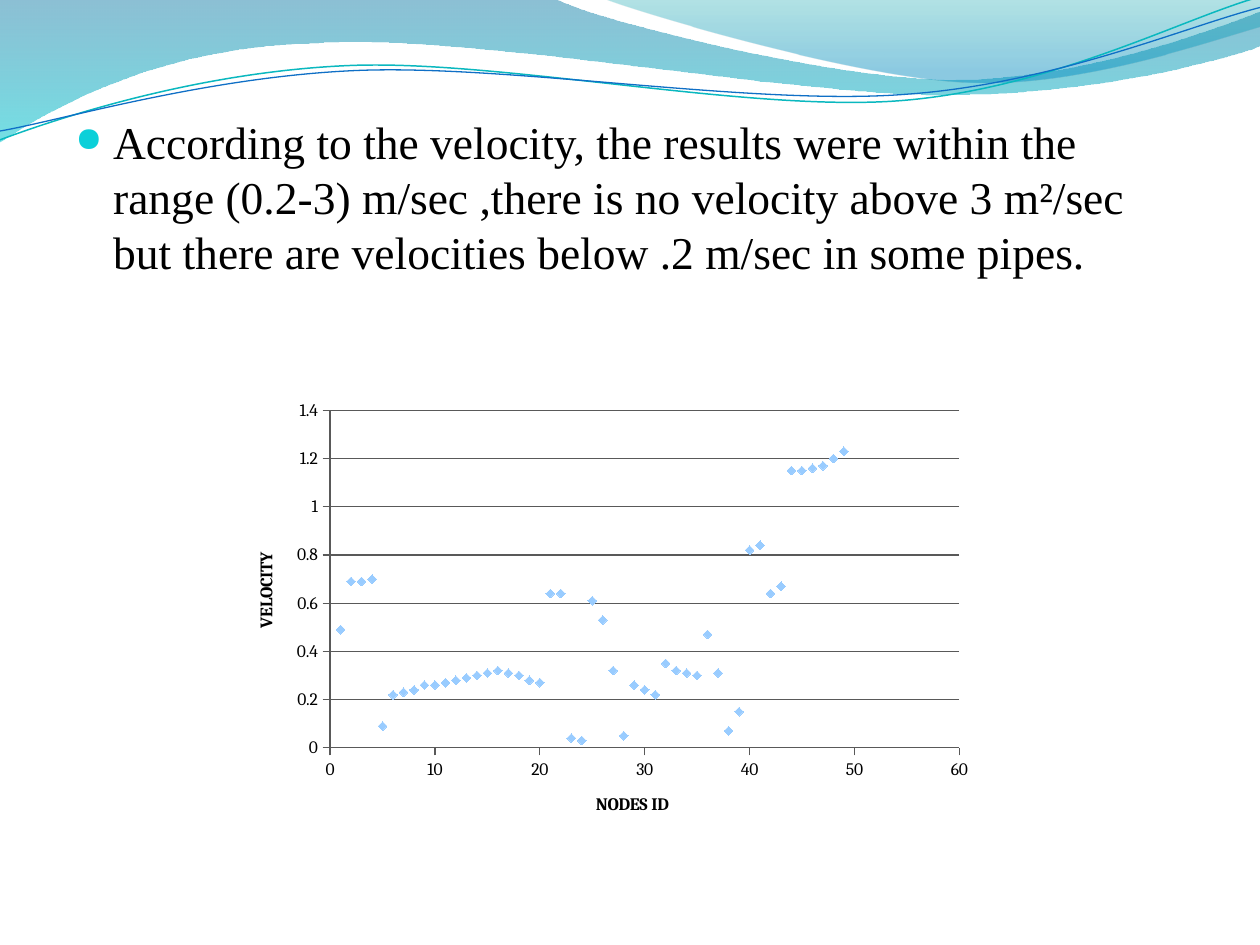
"""Build the pipe velocity results slide with its wave header and scatter chart."""
from math import cos, radians, sin
from lxml import etree
from pptx import Presentation
from pptx.chart.data import XyChartData
from pptx.dml.color import RGBColor
from pptx.enum.chart import XL_CHART_TYPE as ChartType, XL_MARKER_STYLE as Marker
from pptx.enum.chart import XL_TICK_MARK as TickMark
from pptx.oxml import parse_xml
from pptx.oxml.ns import nsdecls, qn
from pptx.util import Inches, Pt

BLACK = RGBColor(0x00, 0x00, 0x00)
GRAY = RGBColor(0x59, 0x59, 0x59)
SKY = RGBColor(0x99, 0xCC, 0xFF)
TEAL = RGBColor(0x0A, 0xB8, 0xBF)
BLUE = RGBColor(0x0F, 0x6F, 0xC6)
OCEAN = RGBColor(0x00, 0x74, 0xA1)
AQUA = RGBColor(0x00, 0xC6, 0xCF)
SEA = RGBColor(0x00, 0xA1, 0xA9)
AZURE = RGBColor(0x00, 0x8B, 0xBF)
TILT = 2.7


def level(point, center):
    """Turn a point clockwise about a center by the tilt of the strands."""
    x, y = point[0] - center[0], point[1] - center[1]
    c, s = cos(radians(TILT)), sin(radians(TILT))
    return center[0] + x * c - y * s, center[1] + x * s + y * c


def add_wave(segments, close, center=None):
    """Draw an outline of line ends and cubic curves and return its shape."""
    points = [point for segment in segments for point in zip(segment[::2], segment[1::2])]
    if center:
        points = [level(point, center) for point in points]
    points = [(Inches(x), Inches(y)) for x, y in points]
    builder = page.shapes.build_freeform(*points[0], scale=1)
    builder.add_line_segments(points[1:], close=close)
    wave = builder.convert_to_shape()
    wave.shadow.inherit = False
    legs = list(wave.element.iter(qn("a:lnTo")))
    for segment in segments[1:]:
        leg = legs.pop(0)
        if len(segment) == 6:
            leg.tag = qn("a:cubicBezTo")
            for control in (legs.pop(0), legs.pop(0)):
                leg.append(control[0])
                control.getparent().remove(control)
    return wave


deck = Presentation()
deck.slide_width, deck.slide_height = Inches(10), Inches(7.5)
page = deck.slides.add_slide(deck.slide_layouts[6])

bands = [
    ([(0, 0), (4.4, -0.01), (4.76, 0.17, 6.64, 0.63, 7.58, 0.63),
      (8.53, 0.63, 9.58, 0.26, 10, 0.09), (10.01, 0.36),
      (9.83, 0.44, 8.7, 0.76, 7.46, 0.75),
      (6.22, 0.75, 3.82, 0.28, 2.57, 0.34),
      (1.29, 0.36, 0.46, 0.83, -0.01, 1.13), (0, 0)],
     [(0, OCEAN, 45), (1, AQUA, 55)]),
    ([(4.79, -0.01), (5.09, 0.11, 6.82, 0.62, 7.69, 0.65),
      (8.56, 0.69, 9.61, 0.32, 10, 0.21), (10, 0), (4.79, -0.01)],
     [(0, SEA, 30), (0.8, AZURE, 45)]),
]
for segments, stops in bands:
    band = add_wave(segments, True)
    band.line.fill.background()
    band.fill.gradient()
    band.fill.gradient_angle = 270
    for stop, (position, color, opacity) in zip(band.fill.gradient_stops, stops):
        stop.position = position
        stop.color.rgb = color
    colors = band.element.spPr.iter(qn("a:srgbClr"))
    for node, (position, color, opacity) in zip(colors, stops):
        etree.SubElement(node, qn("a:alpha")).set("val", str(opacity * 1000))

strands = [
    ([(0, 1.11), (0.48, 0.93, 1.58, 0.57, 2.77, 0.52),
      (3.95, 0.47, 5.93, 0.89, 7.13, 0.8),
      (8.33, 0.71, 9.38, 0.15, 9.98, -0.02)], (4.99, 0.58), TEAL, 0.85),
    ([(0, 1.04), (0.47, 0.96, 1.64, 0.61, 2.83, 0.56),
      (4.03, 0.51, 5.97, 0.84, 7.17, 0.75),
      (8.36, 0.67, 9.41, 0.21, 10, 0.06)], (5, 0.59), BLUE, 0.75),
]
pair = []
for segments, center, color, width in strands:
    strand = add_wave(segments, False, center)
    strand.rotation = -TILT
    strand.fill.background()
    strand.line.color.rgb = color
    strand.line.width = Pt(width)
    pair.append(strand)
page.shapes.add_group_shape(pair)

box = page.shapes.add_textbox(Inches(0.5), Inches(0.86), Inches(9), Inches(6.06))
box.text_frame.word_wrap = True
para = box.text_frame.paragraphs[0]
span = para.add_run()
span.text = ("According to the velocity, the results were within the range (0.2-3) m/sec "
             ",there is no velocity above 3 m²/sec but there are velocities below "
             ".2 m/sec in some pipes.")
for name, value in {"name": "Times New Roman", "size": Pt(26)}.items():
    setattr(span.font, name, value)
span.font.color.rgb = BLACK
indent = para._p.get_or_add_pPr()
indent.set("marL", str(Inches(0.3)))
indent.set("indent", str(Inches(-0.3)))
for part in ('<a:spcBef {}><a:spcPct val="20000"/></a:spcBef>',
             '<a:buClr {}><a:srgbClr val="0BD0D9"/></a:buClr>',
             '<a:buSzPct {} val="75000"/>',
             '<a:buChar {} char="●"/>'):
    indent.append(parse_xml(part.format(nsdecls("a"))))

velocities = [
    0.49, 0.69, 0.69, 0.7, 0.09, 0.22, 0.23, 0.24, 0.26, 0.26, 0.27, 0.28, 0.29,
    0.3, 0.31, 0.32, 0.31, 0.3, 0.28, 0.27, 0.64, 0.64, 0.04, 0.03, 0.61, 0.53,
    0.32, 0.05, 0.26, 0.24, 0.22, 0.35, 0.32, 0.31, 0.3, 0.47, 0.31, 0.07, 0.15,
    0.82, 0.84, 0.64, 0.67, 1.15, 1.15, 1.16, 1.17, 1.2, 1.23]
data = XyChartData()
readings = data.add_series("Series 1")
for node_id, velocity in enumerate(velocities, 1):
    readings.add_data_point(node_id, velocity)
chart = page.shapes.add_chart(ChartType.XY_SCATTER, Inches(1.87), Inches(2.89),
                              Inches(6.09), Inches(3.67), data).chart
for name, value in {"has_legend": False, "has_title": False}.items():
    setattr(chart, name, value)
for name, value in {"name": "Cambria", "size": Pt(10)}.items():
    setattr(chart.font, name, value)
chart.font.color.rgb = BLACK

plot = chart.plots[0]
plot.vary_by_categories = False
series = plot.series[0]
series.smooth = False
series.format.line.fill.background()
series.marker.style = Marker.DIAMOND
series.marker.size = 5
series.marker.format.fill.solid()
series.marker.format.fill.fore_color.rgb = SKY
series.marker.format.line.color.rgb = SKY

axes = [
    (chart.category_axis, "NODES ID", 60, 10, False, 0),
    (chart.value_axis, "VELOCITY", 1.4, 0.2, True, -5400000),
]
for axis, title, maximum, unit, grid, turn in axes:
    formats = {"minimum_scale": 0, "maximum_scale": maximum, "major_unit": unit,
               "has_major_gridlines": grid, "major_tick_mark": TickMark.OUTSIDE,
               "minor_tick_mark": TickMark.NONE}
    for name, value in formats.items():
        setattr(axis, name, value)
    axis.tick_labels.number_format = "General"
    axis.tick_labels.number_format_is_linked = False
    lines = [axis.format.line]
    if grid:
        lines.append(axis.major_gridlines.format.line)
    for line in lines:
        line.color.rgb = GRAY
        line.width = Pt(0.75)
    frame = axis.axis_title.text_frame
    frame.text = title
    frame._txBody.bodyPr.set("rot", str(turn))
    font = frame.paragraphs[0].runs[0].font
    for name, value in {"name": "Cambria", "size": Pt(10), "bold": True}.items():
        setattr(font, name, value)
    font.color.rgb = BLACK

area = chart._chartSpace.find(".//" + qn("c:plotArea"))
for old in area.findall(qn("c:layout")):
    area.remove(old)
layout = parse_xml(f'<c:layout {nsdecls("c")}><c:manualLayout/></c:layout>')
places = {"layoutTarget": "inner", "xMode": "edge", "yMode": "edge",
          "x": 0.75 / 6.09, "y": 0.1, "w": 0.82, "h": 0.73}
for name, value in places.items():
    etree.SubElement(layout[0], qn(f"c:{name}")).set("val", str(value))
area.insert(0, layout)

deck.save("out.pptx")
